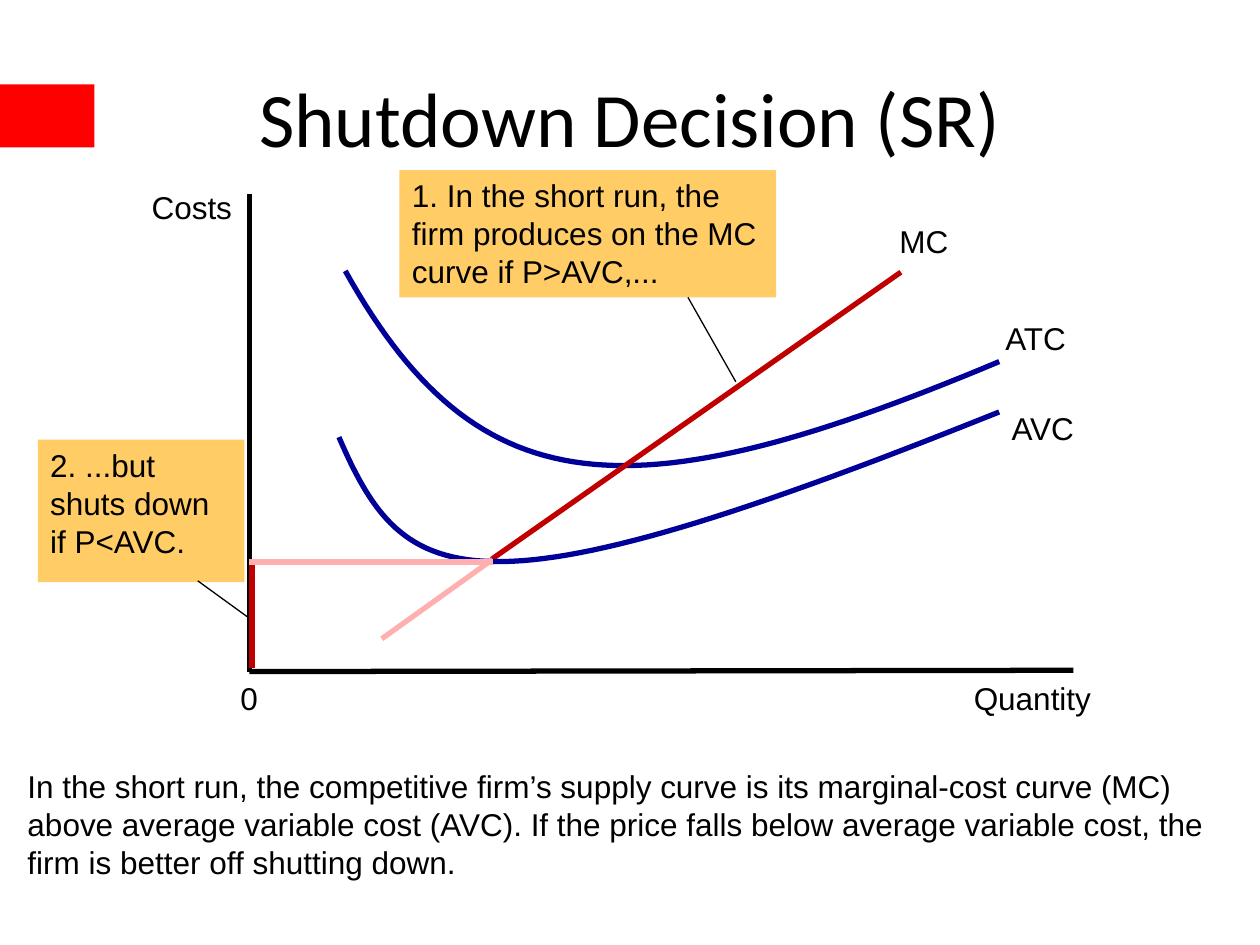
from dataclasses import dataclass

from lxml.etree import SubElement
from pptx import Presentation
from pptx.dml.color import RGBColor
from pptx.enum.shapes import MSO_CONNECTOR, MSO_SHAPE
from pptx.enum.text import MSO_ANCHOR, MSO_AUTO_SIZE, PP_ALIGN
from pptx.oxml.ns import qn
from pptx.util import Inches, Pt


@dataclass(frozen=True)
class Theme:
    black: str = "000000"
    white: str = "FFFFFF"
    banner: str = "FF0000"
    callout: str = "FFCC66"
    average: str = "000099"
    supply: str = "C00000"
    below: str = "FFAFAF"
    title_font: str = "Calibri"
    body_font: str = "Arial"
    title_size: int = 44
    body_size: int = 18
    curve_width: float = 3
    leader_width: float = 0.75


T = Theme()
WIDTH, HEIGHT = Inches(10), Inches(7.5)
COLUMNS = 100
CELL = WIDTH / COLUMNS  # square grid cells: 100 columns by 75 rows
LABEL_ROWS = 4


def cells(*values):
    return [round(v * CELL) for v in values]


def within(box, x, y):
    """Slide grid position of a point given from the corner of a box."""
    return box[0] + x, box[1] + y


def add_run(p, text, font=T.body_font, size=T.body_size):
    r = p.add_run()
    r.text = text
    r.font.name, r.font.size = font, Pt(size)
    r.font.color.rgb = RGBColor.from_string(T.black)


def fill_text(tf, lines, align=PP_ALIGN.LEFT, wrap=True):
    tf.word_wrap = wrap
    tf.auto_size = MSO_AUTO_SIZE.SHAPE_TO_FIT_TEXT
    tf.vertical_anchor = MSO_ANCHOR.TOP
    for i, line in enumerate(lines):
        p = tf.paragraphs[0] if i == 0 else tf.add_paragraph()
        p.alignment = align
        add_run(p, line)


def add_text(s, box, text, **options):
    tb = s.shapes.add_textbox(*cells(*box))
    fill_text(tb.text_frame, [text], **options)


def add_rect(s, box, color):
    sp = s.shapes.add_shape(MSO_SHAPE.RECTANGLE, *cells(*box))
    sp.shadow.inherit = False
    sp.fill.solid()
    sp.fill.fore_color.rgb = RGBColor.from_string(color)
    sp.line.fill.background()
    return sp


def set_line(shape, color, width):
    shape.line.color.rgb = RGBColor.from_string(color)
    shape.line.width = Pt(width)


def add_line(s, box, start, end, color, width=T.curve_width):
    ends = cells(*within(box, *start), *within(box, *end))
    cx = s.shapes.add_connector(MSO_CONNECTOR.STRAIGHT, *ends)
    set_line(cx, color, width)
    SubElement(cx._element.spPr, qn("a:effectLst"))


def add_curve(s, box, controls, color, steps=60):
    """Cubic Bezier curve through short segments."""
    def point(t):
        weights = ((1 - t) ** 3, 3 * t * (1 - t) ** 2, 3 * t * t * (1 - t), t ** 3)
        x, y = (sum(w * v for w, v in zip(weights, axis)) for axis in zip(*controls))
        return cells(*within(box, x, y))

    points = [point(i / steps) for i in range(steps + 1)]
    builder = s.shapes.build_freeform(*points[0])
    builder.add_line_segments(points[1:], close=False)
    sp = builder.convert_to_shape()
    sp.shadow.inherit = False
    sp.fill.background()
    set_line(sp, color, T.curve_width)


def add_header(s, box, text):
    add_rect(s, (0, 6.7, 7.5, 5), T.banner)
    title = s.shapes.title
    title.left, title.top, title.width, title.height = cells(*box)
    tf = title.text_frame
    tf.vertical_anchor = MSO_ANCHOR.MIDDLE
    p = tf.paragraphs[0]
    p.alignment = PP_ALIGN.CENTER
    add_run(p, text, T.title_font, T.title_size)


def add_graph(s, box):
    w, h = box[2:]
    set_line(add_rect(s, box, T.white), T.white, 2)

    # Axes
    add_line(s, box, (0, 0), (0, h), T.black)
    add_line(s, box, (0, h), (w, h - 0.1), T.black)

    # Average cost curves
    add_curve(s, box, [(7.6, 6.1), (18.1, 24.9), (30.2, 25.6), (59.5, 13.3)], T.average)

    # Marginal cost, above and below average variable cost
    add_line(s, box, (19.2, 29), (51.7, 6.2), T.supply)
    add_line(s, box, (10.5, 35.3), (19.3, 29), T.below)
    add_curve(s, box, [(7.1, 19.3), (12.3, 31.3), (17.2, 34.3), (59.5, 17.3)], T.average)

    # Shutdown price
    add_line(s, box, (0.2, h - 0.3), (0.2, 29), T.supply)
    add_line(s, box, (0, 29.2), (19.3, 29.2), T.below)

    # Labels: text, column, row, columns wide, alignment
    labels = [
        ("Costs", -8.9, -1, 8.5, PP_ALIGN.RIGHT),
        ("Quantity", 56.5, h + 0.1, 12.1, PP_ALIGN.LEFT),
        ("0", -1.7, h + 0.1, 3.4, PP_ALIGN.LEFT),
        ("ATC", 59, 9.4, 6.9, PP_ALIGN.LEFT),
        ("MC", 50.6, 1.7, 5.9, PP_ALIGN.LEFT),
        ("AVC", 59.5, 16.6, 7, PP_ALIGN.LEFT),
    ]
    for text, x, y, columns, align in labels:
        add_text(s, (*within(box, x, y), columns, LABEL_ROWS), text,
                 align=align, wrap=False)


def add_callout(s, box, lines, start, end):
    fill_text(add_rect(s, box, T.callout).text_frame, lines)
    add_line(s, box, start, end, T.black, T.leader_width)


def main():
    prs = Presentation()
    prs.slide_width, prs.slide_height = WIDTH, HEIGHT
    s = prs.slides.add_slide(prs.slide_layouts[5])

    add_header(s, (5, 3, 90, 12.5), "Shutdown Decision (SR)")
    add_graph(s, (19.8, 15.4, 65.4, 37.9))
    add_callout(s, (31.7, 13.5, 29.9, 10.1),
                ["1. In the short run, the firm produces on the MC curve if P>AVC,..."],
                (22.9, 10.1), (26.7, 16.8))
    add_callout(s, (3, 34.9, 16.4, 11.3),
                ["2. ...but", "shuts down", "if P<AVC."],
                (12.7, 11.2), (16.7, 14.1))
    add_text(s, (1.2, 60.4, 97.6, 10.1),
             "In the short run, the competitive firm’s supply curve is its "
             "marginal-cost curve (MC) above average variable cost (AVC). If the "
             "price falls below average variable cost, the firm is better off "
             "shutting down.")

    prs.save("out.pptx")


if __name__ == "__main__":
    main()
